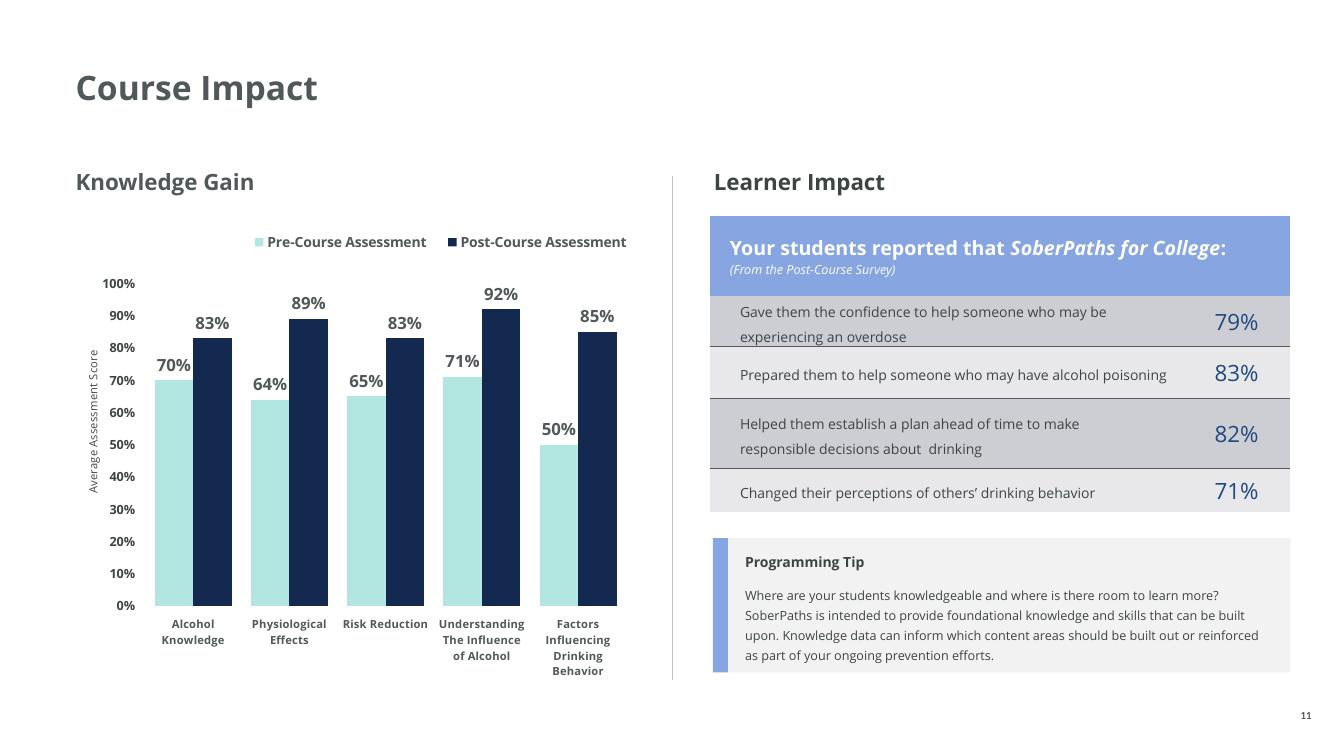
from lxml import etree
from pptx import Presentation
from pptx.chart import data as chart_data
from pptx.dml.color import RGBColor
from pptx.enum import chart as ch, shapes, text
from pptx.oxml import parse_xml
from pptx.oxml.ns import nsdecls, qn
from pptx.util import Inches, Pt

FONT = "Open Sans"
GREY, DARK, BLUE, WHITE = "515859", "3D4543", "87A5E0", "FFFFFF"
PROGRAM = "SoberPaths"
NO_GRID_STYLE = "{2D5ABB26-0587-4C30-8999-92F81FD0307C}"

TOPICS = ["Alcohol Knowledge", "Physiological Effects", "Risk Reduction",
          "Understanding The Influence of Alcohol",
          "Factors Influencing Drinking Behavior"]
SCORES = [("Pre-Course Assessment", (0.7, 0.64, 0.65, 0.71, 0.5), "B1E6E1"),
          ("Post-Course Assessment", (0.83, 0.89, 0.83, 0.92, 0.85), "142950")]
OUTCOMES = [
    (["Gave them the confidence to help someone who may be experiencing an overdose"], "79%"),
    (["Prepared them to help someone who may have alcohol poisoning"], "83%"),
    (["Helped them establish a plan ahead of time to make",
      "responsible decisions about  drinking"], "82%"),
    (["Changed their perceptions of others’ drinking behavior"], "71%"),
]
TIP = ("Where are your students knowledgeable and where is there room to learn more? "
       f"{PROGRAM} is intended to provide foundational knowledge and skills that can be "
       "built upon. Knowledge data can inform which content areas should be built out or "
       "reinforced as part of your ongoing prevention efforts.")


def rgb(color):
    return RGBColor.from_string(color)


def style(font, size, color, bold=False, italic=False, name=FONT):
    font.name, font.size = name, Pt(size)
    font.bold, font.italic = bold, italic
    font.color.rgb = rgb(color)


def add_run(paragraph, words, *look, **options):
    run = paragraph.add_run()
    run.text = words
    style(run.font, *look, **options)


def set_insets(holder, left, right=0):
    holder.margin_left, holder.margin_right = Inches(left), Inches(right)
    holder.margin_top = holder.margin_bottom = 0


def add_text(slide, box, words, size, color, **options):
    frame = slide.shapes.add_textbox(*map(Inches, box)).text_frame
    frame.word_wrap = True
    set_insets(frame, 0)
    add_run(frame.paragraphs[0], words, size, color, True, **options)
    return frame


def add_panel(slide, box, color):
    panel = slide.shapes.add_shape(shapes.MSO_SHAPE.RECTANGLE, *map(Inches, box))
    panel.shadow.inherit = False
    panel.fill.solid()
    panel.fill.fore_color.rgb = rgb(color)
    panel.line.fill.background()
    return panel


def add_divider(slide):
    divider = slide.shapes.add_connector(
        shapes.MSO_CONNECTOR.STRAIGHT, Inches(6.67), Inches(1.75), Inches(6.67), Inches(6.75))
    divider.line.color.rgb = rgb("C1C1C0")
    divider.line.width = Pt(1)
    etree.SubElement(divider._element.spPr, qn("a:effectLst"))


def place(parent, x, y, w=None, h=None, inner=False):
    for old in parent.findall(qn("c:layout")):
        parent.remove(old)
    layout = parse_xml(f"<c:layout {nsdecls('c')}><c:manualLayout/></c:layout>")
    manual = layout[0]
    settings = [("layoutTarget", "inner" if inner else None),
                ("xMode", "edge"), ("yMode", "edge"),
                ("x", x), ("y", y), ("w", w), ("h", h)]
    for tag, value in settings:
        if value is not None:
            etree.SubElement(manual, qn(f"c:{tag}")).set("val", str(value))
    before = parent.find(qn("c:tx"))
    if before is None:
        before = parent.find(qn("c:legendPos"))
    parent.insert(0 if before is None else parent.index(before) + 1, layout)


def add_score_chart(slide):
    scores = chart_data.CategoryChartData(number_format="0%")
    scores.categories = TOPICS
    for name, values, _ in SCORES:
        scores.add_series(name, values)
    chart = slide.shapes.add_chart(
        ch.XL_CHART_TYPE.COLUMN_CLUSTERED, Inches(0.75), Inches(2.22),
        Inches(5.75), Inches(4.57), scores).chart
    style(chart.font, 10, GREY, name="Arial")
    chart.has_title = False

    plot = chart.plots[0]
    plot.gap_width, plot.overlap = 50, 0
    plot.vary_by_categories = False
    for series, (_, _, color) in zip(plot.series, SCORES):
        series.format.fill.solid()
        series.format.fill.fore_color.rgb = rgb(color)
        labels = series.data_labels
        labels.show_value = True
        labels.position = ch.XL_LABEL_POSITION.OUTSIDE_END
        labels.number_format, labels.number_format_is_linked = "0%", False
        style(labels.font, 12, GREY, True)

    topics, score = chart.category_axis, chart.value_axis
    for axis, size, color in ((topics, 8, GREY), (score, 9, DARK)):
        axis.has_major_gridlines = False
        axis.format.line.fill.background()
        style(axis.tick_labels.font, size, color, True)
    score.minimum_scale, score.maximum_scale, score.major_unit = 0, 1, 0.1
    score.tick_labels.number_format = "0%"
    score.tick_labels.number_format_is_linked = False
    caption = score.axis_title
    add_run(caption.text_frame.paragraphs[0], "Average Assessment Score", 8, DARK)

    chart.has_legend = True
    chart.legend.position = ch.XL_LEGEND_POSITION.TOP
    chart.legend.include_in_layout = False
    style(chart.legend.font, 10, GREY, True)
    place(caption._element, 0.01, 0.27)
    place(chart.legend._element, 0.28, 0.01, 0.7, 0.06)
    place(chart._chartSpace.chart.plotArea, 0.12, 0.13, 0.83, 0.7, inner=True)


def add_border(cell, side):
    cell._tc.get_or_add_tcPr().append(parse_xml(
        f'<a:ln{side} {nsdecls("a")} w="12700"><a:solidFill>'
        f'<a:srgbClr val="595959"/></a:solidFill></a:ln{side}>'))


def format_cell(cell, color, inset):
    cell.fill.solid()
    cell.fill.fore_color.rgb = rgb(color)
    cell.vertical_anchor = text.MSO_ANCHOR.MIDDLE
    set_insets(cell, inset)


def add_outcome_table(slide):
    table = slide.shapes.add_table(
        len(OUTCOMES) + 1, 2, Inches(7.04), Inches(2.14), Inches(5.75), Inches(2.94)).table
    table._tbl.tblPr.find(qn("a:tableStyleId")).text = NO_GRID_STYLE
    table.first_row = table.horz_banding = False
    for column, width in zip(table.columns, (4.6, 1.15)):
        column.width = Inches(width)
    for row, height in zip(table.rows, (0.8, 0.5, 0.51, 0.7, 0.43)):
        row.height = Inches(height)

    header = table.cell(0, 0)
    header.merge(table.cell(0, 1))
    format_cell(header, BLUE, 0.2)
    heading = header.text_frame.paragraphs[0]
    add_run(heading, "Your students reported that ", 14, WHITE, True)
    add_run(heading, f"{PROGRAM} for College", 14, WHITE, True, True)
    add_run(heading, ":", 14, WHITE, True)
    add_run(header.text_frame.add_paragraph(), "(From the Post-Course Survey)",
            9, WHITE, italic=True)

    for index, (lines, share) in enumerate(OUTCOMES, 1):
        statement, percent = table.cell(index, 0), table.cell(index, 1)
        for cell, inset in ((statement, 0.3), (percent, 0.1)):
            if index > 1:
                add_border(cell, "T")
            if index < len(OUTCOMES):
                add_border(cell, "B")
            format_cell(cell, "CDCED4" if index % 2 else "E8E8EB", inset)
        wording = statement.text_frame.paragraphs[0]
        wording.line_spacing = 1.3
        for number, line in enumerate(lines):
            if number:
                wording.add_line_break()
            add_run(wording, line, 10, DARK)
        figure = percent.text_frame.paragraphs[0]
        figure.alignment = text.PP_ALIGN.CENTER
        add_run(figure, share, 16, "1F497D")


def add_tip(slide):
    frame = add_panel(slide, (7.14, 5.34, 5.66, 1.33), "F2F2F2").text_frame
    frame.word_wrap = True
    frame.vertical_anchor = text.MSO_ANCHOR.MIDDLE
    set_insets(frame, 0.25, 0.2)
    heading, advice = frame.paragraphs[0], frame.add_paragraph()
    for paragraph in (heading, advice):
        paragraph.alignment = text.PP_ALIGN.LEFT
        paragraph.line_spacing = 1.3
    advice.space_before = Pt(10)
    add_run(heading, "Programming Tip", 10, DARK, True)
    add_run(advice, TIP, 9, DARK)
    add_panel(slide, (7.07, 5.34, 0.15, 1.33), BLUE)


def main():
    deck = Presentation()
    deck.slide_width, deck.slide_height = Inches(13.33), Inches(7.5)
    slide = deck.slides.add_slide(deck.slide_layouts[6])
    add_divider(slide)
    add_outcome_table(slide)
    add_text(slide, (0.75, 1.67, 5.54, 0.4), "Knowledge Gain", 16, GREY)
    add_text(slide, (7.08, 1.67, 5.49, 0.4), "Learner Impact", 16, DARK)
    number = add_text(slide, (12.7, 7.01, 0.51, 0.15), "11", 7, GREY, name="Lato")
    number.vertical_anchor = text.MSO_ANCHOR.BOTTOM
    number.paragraphs[0].alignment = text.PP_ALIGN.CENTER
    title = add_text(slide, (0.75, 0.71, 11.83, 0.7), "Course Impact", 24, GREY)
    title.paragraphs[0].line_spacing = 0.9
    add_score_chart(slide)
    add_tip(slide)
    deck.save("out.pptx")


if __name__ == "__main__":
    main()
